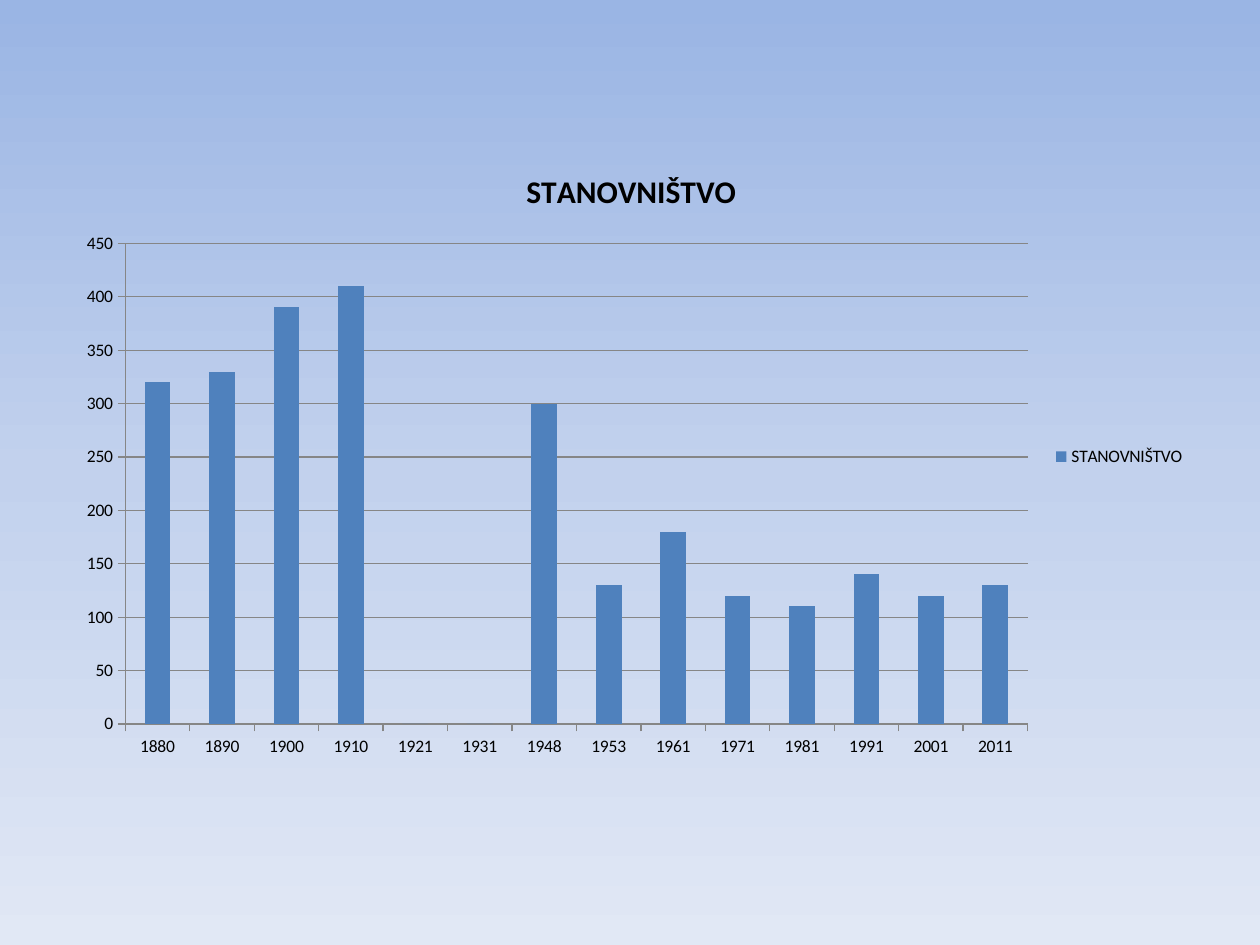
"""Build a slide with a column chart of population by census year."""
from copy import deepcopy
from typing import NamedTuple

from pptx import Presentation
from pptx.chart.data import CategoryChartData
from pptx.dml.color import RGBColor
from pptx.enum.chart import XL_CHART_TYPE as ChartType
from pptx.enum.chart import XL_LEGEND_POSITION as LegendPosition
from pptx.enum.chart import XL_TICK_MARK as TickMark
from pptx.oxml.ns import qn
from pptx.util import Inches, Pt

BLACK = RGBColor(0x00, 0x00, 0x00)
BAR_BLUE = RGBColor(0x4F, 0x81, 0xBD)
LINE_GRAY = RGBColor(0x86, 0x86, 0x86)
SKY_TOP = RGBColor(0x9A, 0xB5, 0xE4)
SKY_MIDDLE = RGBColor(0xC2, 0xD1, 0xED)
SKY_BOTTOM = RGBColor(0xE1, 0xE8, 0xF5)
FONT = "Calibri"
TITLE = "STANOVNIŠTVO"


class Stop(NamedTuple):
    position: float
    color: RGBColor


class Census(NamedTuple):
    year: str
    population: int


SKY = [Stop(0, SKY_TOP), Stop(0.5, SKY_MIDDLE), Stop(1, SKY_BOTTOM)]
CENSUSES = [
    Census("1880", 320), Census("1890", 330), Census("1900", 390),
    Census("1910", 410), Census("1921", 0), Census("1931", 0),
    Census("1948", 300), Census("1953", 130), Census("1961", 180),
    Census("1971", 120), Census("1981", 110), Census("1991", 140),
    Census("2001", 120), Census("2011", 130),
]


def style_font(font, size: float, bold: bool = False) -> None:
    font.name = FONT
    font.size = Pt(size)
    font.bold = bold
    font.color.rgb = BLACK


def style_line(line) -> None:
    line.color.rgb = LINE_GRAY
    line.width = Pt(0.75)


def paint_background(page, stops: list[Stop]) -> None:
    fill = page.background.fill
    fill.gradient()
    fill.gradient_angle = 270
    stop_list = page.element.find(".//" + qn("a:gsLst"))
    while len(stop_list) < len(stops):
        stop_list.append(deepcopy(stop_list[0]))
    for target, stop in zip(fill.gradient_stops, stops):
        target.position = stop.position
        target.color.rgb = stop.color


def add_population_chart(page, censuses: list[Census]) -> None:
    data = CategoryChartData()
    data.categories = [census.year for census in censuses]
    data.add_series(TITLE, [census.population for census in censuses])
    chart = page.shapes.add_chart(
        ChartType.COLUMN_CLUSTERED,
        Inches(0.51), Inches(1.15), Inches(9), Inches(4.95), data,
    ).chart
    style_font(chart.font, 10)

    chart.has_title = True
    title = chart.chart_title
    title.include_in_layout = False
    title.text_frame.text = TITLE
    style_font(title.text_frame.paragraphs[0].runs[0].font, 18, bold=True)

    chart.has_legend = True
    chart.legend.position = LegendPosition.RIGHT
    chart.legend.include_in_layout = False

    plot = chart.plots[0]
    plot.gap_width = 150
    plot.vary_by_categories = False
    bars = plot.series[0].format.fill
    bars.solid()
    bars.fore_color.rgb = BAR_BLUE

    for axis in (chart.category_axis, chart.value_axis):
        axis.major_tick_mark = TickMark.OUTSIDE
        axis.minor_tick_mark = TickMark.NONE
        style_line(axis.format.line)
    value_axis = chart.value_axis
    value_axis.minimum_scale = 0
    value_axis.maximum_scale = 450
    value_axis.major_unit = 50
    value_axis.has_major_gridlines = True
    style_line(value_axis.major_gridlines.format.line)


def main() -> None:
    deck = Presentation()
    deck.slide_width = Inches(10)
    deck.slide_height = Inches(7.5)
    page = deck.slides.add_slide(deck.slide_layouts[6])
    paint_background(page, SKY)
    add_population_chart(page, CENSUSES)
    deck.save("out.pptx")


if __name__ == "__main__":
    main()
